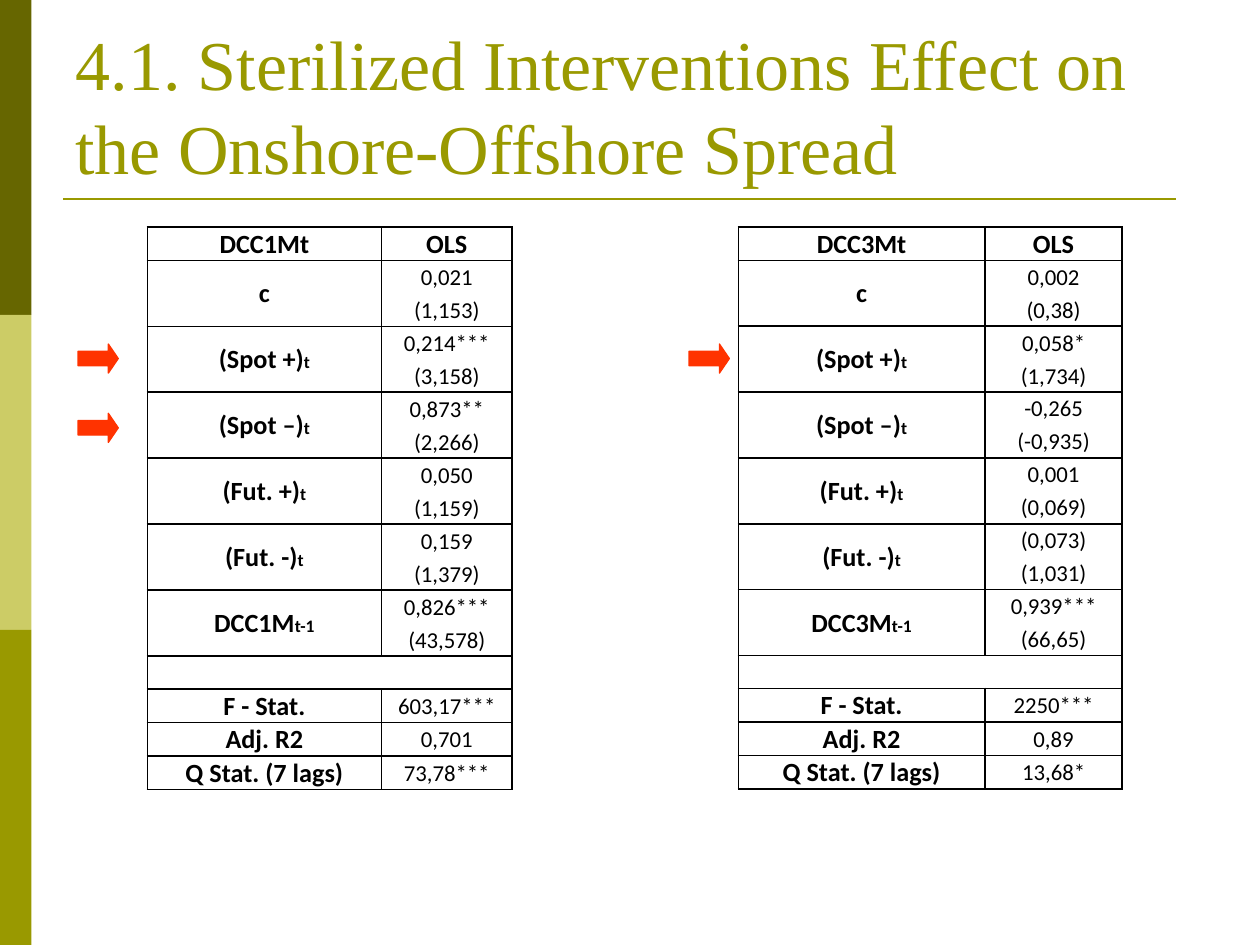
import pptx
import pptx.dml.color
import pptx.enum.shapes
import pptx.enum.text
import pptx.oxml
import pptx.oxml.ns
import pptx.util
from lxml import etree

Pt = pptx.util.Pt
RGBColor = pptx.dml.color.RGBColor
MIDDLE = pptx.enum.text.MSO_ANCHOR.MIDDLE
CENTER = pptx.enum.text.PP_ALIGN.CENTER
SHAPES = pptx.enum.shapes.MSO_SHAPE

DARK_OLIVE = RGBColor(0x66, 0x66, 0x00)
PALE_OLIVE = RGBColor(0xCC, 0xCC, 0x66)
OLIVE = RGBColor(0x99, 0x99, 0x00)
RED = RGBColor(0xFF, 0x33, 0x00)
BLACK = RGBColor(0, 0, 0)

LABEL_SIZE, VALUE_SIZE, SUBSCRIPT_SIZE = 15, 13, 10

# Each entry: label, subscript, cell values (two values take two rows)
DCC1M_ROWS = [
    ("c", "", ["0,021", "(1,153)"]),
    ("(Spot +)", "t", ["0,214***", "(3,158)"]),
    ("(Spot –)", "t", ["0,873**", "(2,266)"]),
    ("(Fut. +)", "t", ["0,050", "(1,159)"]),
    ("(Fut. -)", "t", ["0,159", "(1,379)"]),
    ("DCC1M", "t-1", ["0,826***", "(43,578)"]),
    ("", "", []),
    ("F - Stat.", "", ["603,17***"]),
    ("Adj. R2", "", ["0,701"]),
    ("Q Stat. (7 lags)", "", ["73,78***"]),
]
DCC3M_ROWS = [
    ("c", "", ["0,002", "(0,38)"]),
    ("(Spot +)", "t", ["0,058*", "(1,734)"]),
    ("(Spot –)", "t", ["-0,265", "(-0,935)"]),
    ("(Fut. +)", "t", ["0,001", "(0,069)"]),
    ("(Fut. -)", "t", ["(0,073)", "(1,031)"]),
    ("DCC3M", "t-1", ["0,939***", "(66,65)"]),
    ("", "", []),
    ("F - Stat.", "", ["2250***"]),
    ("Adj. R2", "", ["0,89"]),
    ("Q Stat. (7 lags)", "", ["13,68*"]),
]


def add_span(para, text, size, font, color, bold=False):
    span = para.add_run()
    span.text = text
    span.font.size = Pt(size)
    span.font.name = font
    span.font.bold = bold
    span.font.color.rgb = color


def add_solid(page, kind, box, color, line=None):
    shape = page.shapes.add_shape(kind, *[Pt(length) for length in box])
    shape.shadow.inherit = False
    shape.fill.solid()
    shape.fill.fore_color.rgb = color
    if line:
        shape.line.color.rgb = color
        shape.line.width = Pt(line)
    else:
        shape.line.fill.background()
    return shape


def add_side_bands(page, left, top, width, height):
    colors = [DARK_OLIVE, PALE_OLIVE, OLIVE]
    band = height / len(colors)
    for index, color in enumerate(colors):
        add_solid(page, SHAPES.RECTANGLE, (left, top + index * band, width, band), color)


def add_heading(page, left, top, width, height, text):
    title = page.shapes.title
    title.left, title.top, title.width, title.height = Pt(left), Pt(top), Pt(width), Pt(height)
    frame = title.text_frame
    frame.word_wrap = True
    frame.auto_size = pptx.enum.text.MSO_AUTO_SIZE.NONE
    frame.vertical_anchor = pptx.enum.text.MSO_ANCHOR.BOTTOM
    para = frame.paragraphs[0]
    para.alignment = pptx.enum.text.PP_ALIGN.LEFT
    add_span(para, text, 40, "Times New Roman", OLIVE)

    # Rule below the title
    rule_y = Pt(top + height + 2.2)
    rule = page.shapes.add_connector(
        pptx.enum.shapes.MSO_CONNECTOR.STRAIGHT, Pt(left), rule_y, Pt(672), rule_y)
    rule.line.color.rgb = OLIVE
    rule.line.width = Pt(1.5)
    etree.SubElement(rule._element.spPr, pptx.oxml.ns.qn("a:effectLst"))


def set_borders(cell, open_sides=""):
    properties = cell._tc.get_or_add_tcPr()
    for side in "LRTB":
        fill = "<a:noFill/>" if side in open_sides else (
            f'<a:solidFill><a:srgbClr val="{BLACK}"/></a:solidFill>')
        properties.append(pptx.oxml.parse_xml(
            f'<a:ln{side} {pptx.oxml.ns.nsdecls("a")} w="{Pt(1)}">{fill}</a:ln{side}>'))
    cell.fill.background()


def fill_cell(cell, spans, bold=False, open_sides=""):
    cell.margin_left = cell.margin_right = cell.margin_top = Pt(0.75)
    cell.margin_bottom = 0
    cell.vertical_anchor = MIDDLE
    set_borders(cell, open_sides)
    para = cell.text_frame.paragraphs[0]
    para.alignment = CENTER
    for text, size in spans:
        add_span(para, text, size, "Calibri", BLACK, bold)
    if not spans:  # keeps an empty row from growing
        etree.SubElement(para._p, pptx.oxml.ns.qn("a:endParaRPr"), sz=str(VALUE_SIZE * 100))


def add_results_table(page, left, top, width, height, name, entries):
    row_count = 1 + sum(max(1, len(values)) for _, _, values in entries)
    table = page.shapes.add_table(
        row_count, 2, Pt(left), Pt(top), Pt(width), Pt(height)).table
    table.first_row = table.horz_banding = False
    label_share = 0.642
    table.columns[0].width = Pt(width * label_share)
    table.columns[1].width = Pt(width * (1 - label_share))
    for row in table.rows:
        row.height = Pt(height / row_count)

    # Header
    for column, text in enumerate([name, "OLS"]):
        fill_cell(table.cell(0, column), [(text, LABEL_SIZE)], bold=True)

    # Estimates and statistics
    row = 1
    for label, subscript, values in entries:
        if not values:
            for column in range(2):
                fill_cell(table.cell(row, column), [])
            table.cell(row, 0).merge(table.cell(row, 1))
            row += 1
            continue
        spans = [(label, LABEL_SIZE)]
        if subscript:
            spans.append((subscript, SUBSCRIPT_SIZE))
        paired = len(values) == 2
        for offset, value in enumerate(values):
            open_side = ("B", "T")[offset] if paired else ""
            fill_cell(table.cell(row + offset, 0), [] if offset else spans, bold=True)
            fill_cell(table.cell(row + offset, 1), [(value, VALUE_SIZE)], open_sides=open_side)
        if paired:
            table.cell(row, 0).merge(table.cell(row + 1, 0))
        row += len(values)


def add_arrow(page, left, top, width, height):
    arrow = add_solid(page, SHAPES.RIGHT_ARROW, (left, top, width, height), RED, line=0.75)
    arrow.adjustments[0] = 0.5
    arrow.adjustments[1] = 0.34


def main():
    deck = pptx.Presentation()
    deck.slide_width, deck.slide_height = Pt(720), Pt(540)
    page = deck.slides.add_slide(deck.slide_layouts[5])

    add_side_bands(page, 0, 0, 18, 540)
    add_heading(page, 36, 21.6, 648, 90,
                "4.1. Sterilized Interventions Effect on the Onshore-Offshore Spread")
    add_results_table(page, 84.2, 129.6, 208.4, 320.6, "DCC1Mt", DCC1M_ROWS)
    add_results_table(page, 421.9, 129.6, 219.4, 320.2, "DCC3Mt", DCC3M_ROWS)

    # Arrows at the significant spot interventions
    for left, top in [(44.6, 196.6), (44.6, 236.2), (393.8, 196.6)]:
        add_arrow(page, left, top, 23, 16.6)

    deck.save("out.pptx")


if __name__ == "__main__":
    main()
